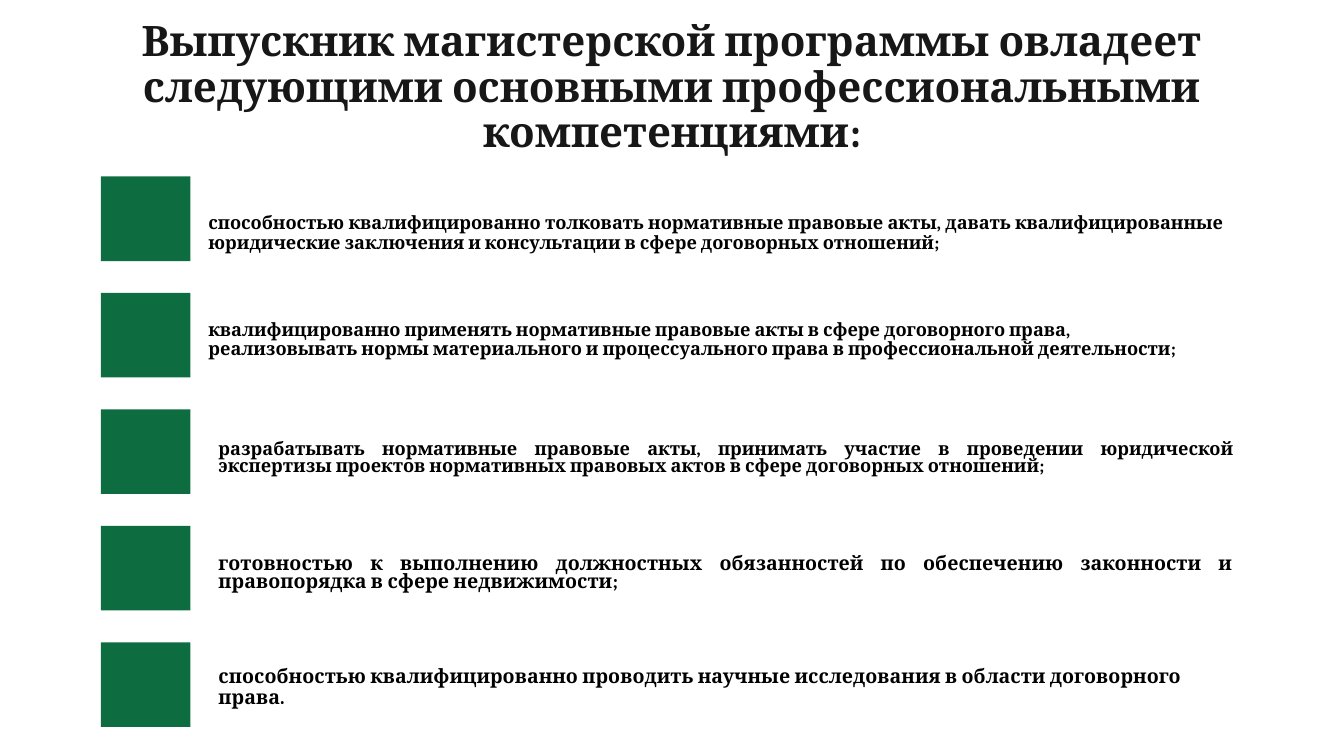
from pptx import Presentation
from pptx.dml.color import RGBColor
from pptx.enum import shapes, text
from pptx.util import Pt

GREEN = RGBColor(0x0E, 0x6C, 0x41)
DARK = RGBColor(0x18, 0x17, 0x17)
BLACK = RGBColor(0, 0, 0)
LEFT, JUSTIFY = text.PP_ALIGN.LEFT, text.PP_ALIGN.JUSTIFY


def write(frame, wording, size, color, alignment, line_spacing, anchor, bottom):
    frame.word_wrap = True
    frame.auto_size = text.MSO_AUTO_SIZE.NONE
    frame.vertical_anchor = anchor
    frame.margin_left = frame.margin_right = Pt(7.2)
    frame.margin_top = Pt(3.6)
    frame.margin_bottom = Pt(bottom)
    frame.text = wording
    paragraph = frame.paragraphs[0]
    paragraph.alignment = alignment
    paragraph.line_spacing = line_spacing
    paragraph.space_before = Pt(0)
    font = paragraph.runs[0].font
    font.name, font.size, font.bold = "Cambria", Pt(size), True
    font.color.rgb = color


presentation = Presentation()
presentation.slide_width, presentation.slide_height = Pt(960), Pt(540)
slide = presentation.slides.add_slide(presentation.slide_layouts[5])

title = slide.shapes.title
title.left, title.top, title.width, title.height = Pt(66), Pt(28.8), Pt(828), Pt(104.4)
write(title.text_frame,
      "Выпускник магистерской программы овладеет следующими "
      "основными профессиональными компетенциями:",
      30, DARK, text.PP_ALIGN.CENTER, 0.9, text.MSO_ANCHOR.MIDDLE, 39)

# Wording, left, offset below the square's top, size, alignment, line spacing
competencies = [
    ("способностью квалифицированно толковать нормативные правовые акты, давать "
     "квалифицированные юридические заключения и консультации в сфере договорных отношений;",
     141.8, 7.2, 13, JUSTIFY, 0.9),
    ("квалифицированно применять нормативные правовые акты в сфере договорного права, "
     "реализовывать нормы материального и процессуального права в профессиональной деятельности;",
     141.8, 0, 13, LEFT, 0.9),
    ("разрабатывать нормативные правовые акты, принимать участие в проведении юридической "
     "экспертизы проектов нормативных правовых актов в сфере договорных отношений;",
     149, 0, 13, JUSTIFY, 0.8),
    ("готовностью к выполнению должностных обязанностей по обеспечению законности и "
     "правопорядка в сфере недвижимости;",
     149, 0, 14, JUSTIFY, 0.8),
    ("способностью квалифицированно проводить научные исследования в области договорного права.",
     149, 0, 14, LEFT, 0.9),
]
for row, (wording, left, offset, size, alignment, line_spacing) in enumerate(competencies):
    top = 126 + row * 83.2
    square = slide.shapes.add_shape(
        shapes.MSO_SHAPE.RECTANGLE, Pt(72), Pt(top), Pt(64), Pt(60.5))
    square.shadow.inherit = False
    square.fill.solid()
    square.fill.fore_color.rgb = GREEN
    square.line.fill.background()

    box = slide.shapes.add_textbox(Pt(left), Pt(top + offset), Pt(738.7), Pt(64.8))
    write(box.text_frame, wording, size, BLACK, alignment, line_spacing,
          text.MSO_ANCHOR.BOTTOM, 17)

presentation.save("out.pptx")
